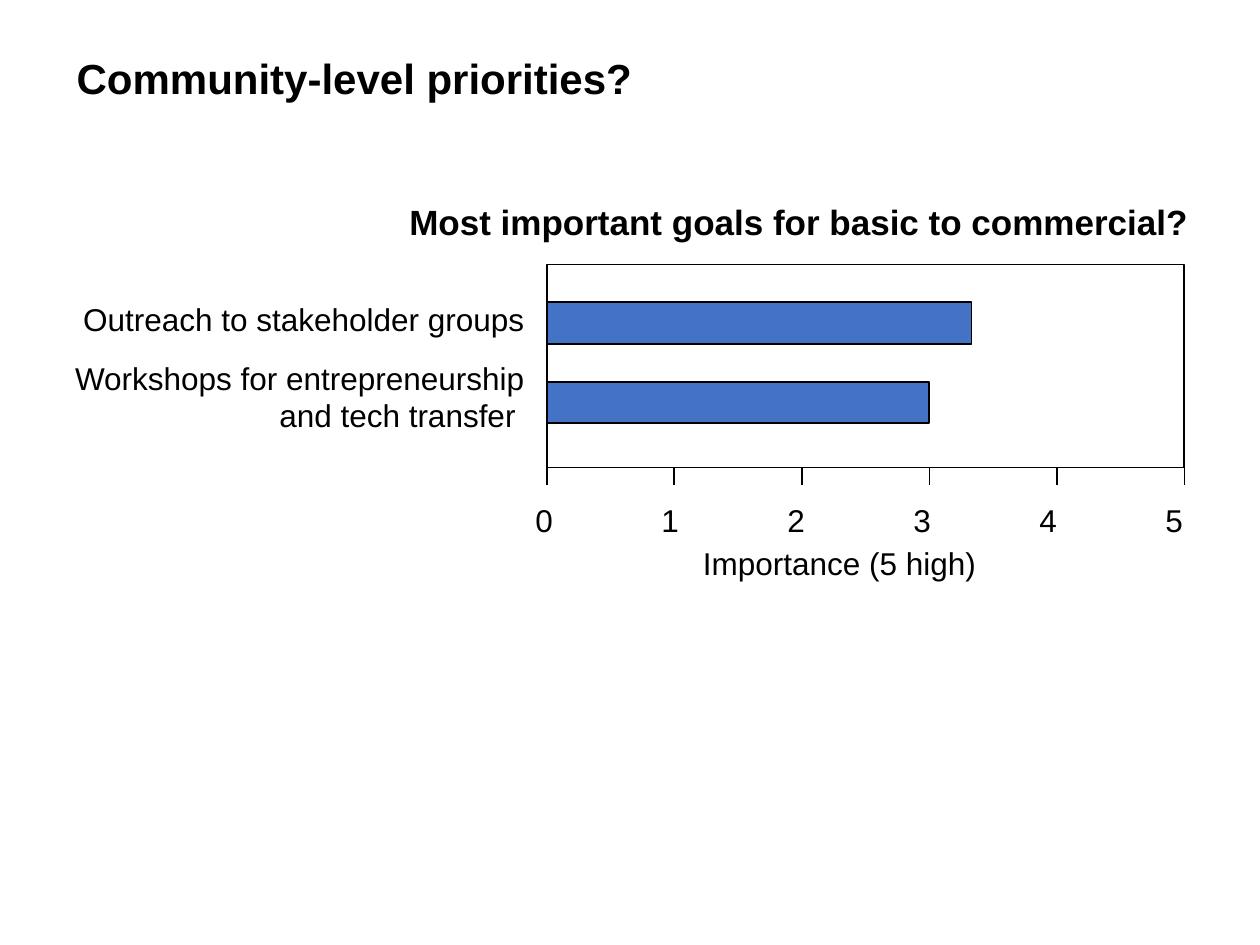
from lxml import etree
from pptx import Presentation
from pptx.dml.color import RGBColor
from pptx.enum.shapes import MSO_CONNECTOR, MSO_SHAPE
from pptx.enum.text import PP_ALIGN
from pptx.oxml.ns import qn
from pptx.util import Inches, Pt

LEFT, RIGHT = PP_ALIGN.LEFT, PP_ALIGN.RIGHT
RECT, STRAIGHT = MSO_SHAPE.RECTANGLE, MSO_CONNECTOR.STRAIGHT
BLACK = RGBColor(0, 0, 0)
BLUE = RGBColor(0x44, 0x72, 0xC4)

# Plot grid in inches: one column per unit of importance, one row per goal
PLOT_X, PLOT_Y, PLOT_H = 4.34, 2.1, 1.61
UNIT, UNITS = 1.012, 5
BAR_Y, BAR_H, ROW = 2.4, 0.33, 0.63
TICK = 0.14
GOALS = [
    ("Outreach to stakeholder groups", 3.33),
    ("Workshops for entrepreneurship and tech transfer ", 3),
]

prs = Presentation()
prs.slide_width, prs.slide_height = Inches(10), Inches(7.5)
s = prs.slides.add_slide(prs.slide_layouts[6])


def add_text(x, y, w, h, lines, size, bold=False, wrap=False,
             align=LEFT, before=0, after=0):
    """Add a text box with one paragraph per line and return its text frame."""
    tf = s.shapes.add_textbox(Inches(x), Inches(y), Inches(w), Inches(h)).text_frame
    tf.word_wrap = wrap
    for i, line in enumerate(lines):
        p = tf.paragraphs[0] if i == 0 else tf.add_paragraph()
        p.alignment = align
        p.space_before, p.space_after = Pt(before), Pt(after)
        r = p.add_run()
        r.text = line
        r.font.name, r.font.size, r.font.bold = "Arial", Pt(size), bold
        r.font.color.rgb = BLACK
    return tf


def add_box(x, y, w, h, fill=None):
    sp = s.shapes.add_shape(RECT, Inches(x), Inches(y), Inches(w), Inches(h))
    sp.shadow.inherit = False
    if fill is None:
        sp.fill.background()
    else:
        sp.fill.solid()
        sp.fill.fore_color.rgb = fill
    sp.line.color.rgb, sp.line.width = BLACK, Pt(1)


# Headings and goal labels
add_text(0.51, 0.37, 5.12, 0.5, ["Community-level priorities?"], 24, bold=True)
add_text(3.15, 1.54, 6.43, 0.44,
         ["Most important goals for basic to commercial?"], 20, bold=True)
add_text(0.44, 2.33, 3.82, 1.57, [goal for goal, _ in GOALS], 18,
         wrap=True, align=RIGHT, before=6, after=6)

# Plot frame and bars
add_box(PLOT_X, PLOT_Y, UNITS * UNIT, PLOT_H)
for row, (_, score) in enumerate(GOALS):
    add_box(PLOT_X, BAR_Y + row * ROW, score * UNIT, BAR_H, BLUE)

# Axis ticks
axis_y = PLOT_Y + PLOT_H
for n in range(UNITS + 1):
    x = Inches(PLOT_X + n * UNIT)
    tick = s.shapes.add_connector(STRAIGHT, x, Inches(axis_y), x, Inches(axis_y + TICK))
    tick.line.color.rgb, tick.line.width = BLACK, Pt(1)
    etree.SubElement(tick._element.spPr, qn("a:effectLst"))

# Axis numbers, spaced by tab stops one inch apart
tf = add_text(4.15, 3.93, 5.43, 0.4,
              ["\t".join(str(n) for n in range(UNITS + 1))], 18, wrap=True, after=6)
tabs = etree.SubElement(tf.paragraphs[0]._p.get_or_add_pPr(), qn("a:tabLst"))
for n in range(1, UNITS + 1):
    etree.SubElement(tabs, qn("a:tab"), pos=str(Inches(n)), algn="l")

add_text(5.48, 4.27, 2.39, 0.4, ["Importance (5 high)"], 18)

prs.save("out.pptx")
